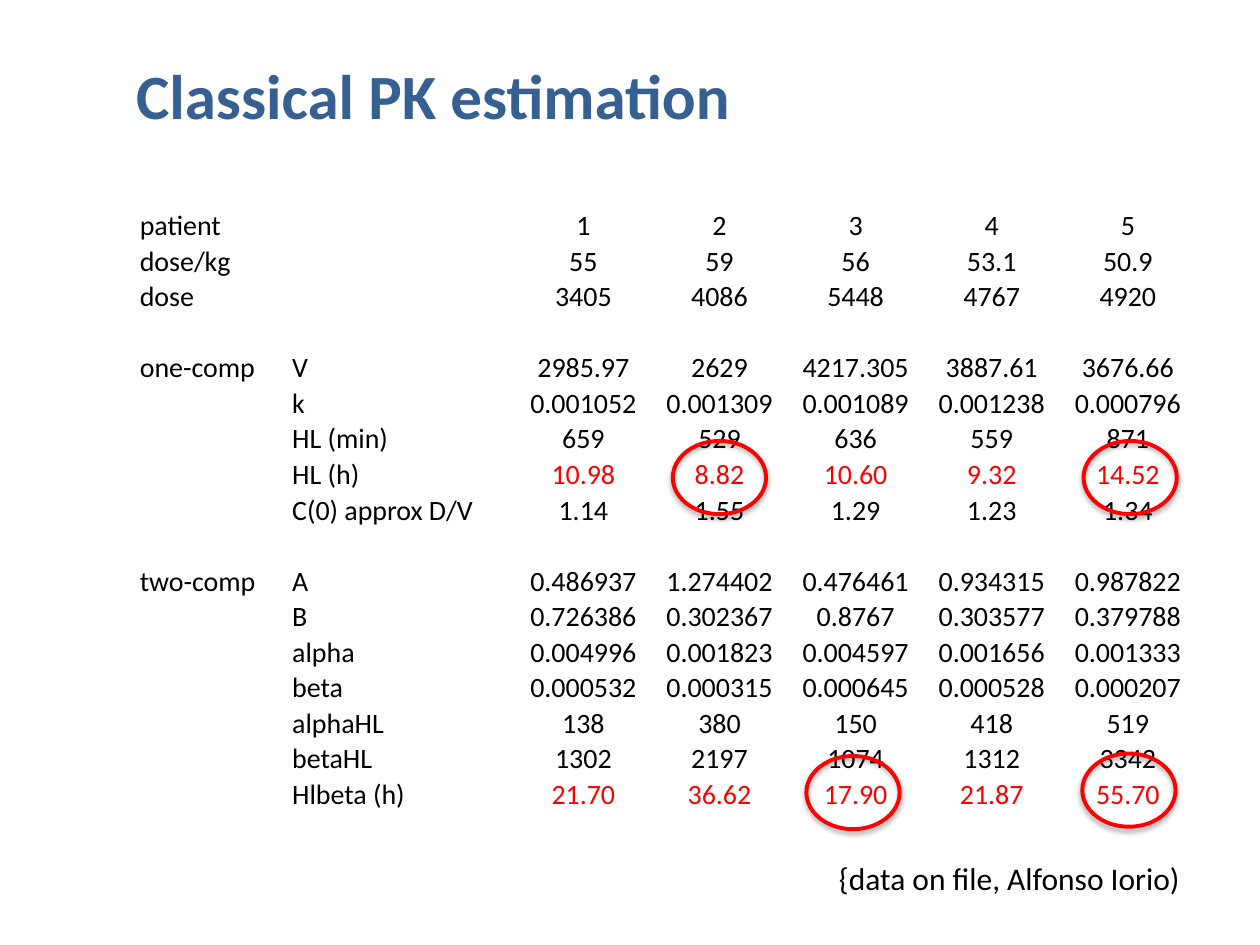
from lxml.etree import SubElement
from pptx import Presentation
from pptx.dml.color import RGBColor
from pptx.enum.shapes import MSO_SHAPE as Shape
from pptx.enum.text import MSO_ANCHOR as Anchor, MSO_AUTO_SIZE as AutoSize, PP_ALIGN as Align
from pptx.oxml.ns import qn
from pptx.util import Pt

BLACK, RED, BLUE = "000000", "FF0000", "376092"
COLUMN_WIDTHS = [68.4, 18.7, 128.2] + [77.8] * 5
ROW_HEIGHT = 20.2
RED_ROWS = ("HL (h)", "Hlbeta (h)")
PK_ROWS = [
    ("patient", "", "1", "2", "3", "4", "5"),
    ("dose/kg", "", "55", "59", "56", "53.1", "50.9"),
    ("dose", "", "3405", "4086", "5448", "4767", "4920"),
    ("",) * 7,
    ("one-comp", "V", "2985.97", "2629", "4217.305", "3887.61", "3676.66"),
    ("", "k", "0.001052", "0.001309", "0.001089", "0.001238", "0.000796"),
    ("", "HL (min)", "659", "529", "636", "559", "871"),
    ("", "HL (h)", "10.98", "8.82", "10.60", "9.32", "14.52"),
    ("", "C(0) approx D/V", "1.14", "1.55", "1.29", "1.23", "1.34"),
    ("",) * 7,
    ("two-comp", "A", "0.486937", "1.274402", "0.476461", "0.934315", "0.987822"),
    ("", "B", "0.726386", "0.302367", "0.8767", "0.303577", "0.379788"),
    ("", "alpha", "0.004996", "0.001823", "0.004597", "0.001656", "0.001333"),
    ("", "beta", "0.000532", "0.000315", "0.000645", "0.000528", "0.000207"),
    ("", "alphaHL", "138", "380", "150", "418", "519"),
    ("", "betaHL", "1302", "2197", "1074", "1312", "3342"),
    ("", "Hlbeta (h)", "21.70", "36.62", "17.90", "21.87", "55.70"),
]
HIGHLIGHTS = [(384.5, 252), (619.2, 252), (460.8, 432), (618.5, 430.6)]


def rgb(hex_color):
    return RGBColor.from_string(hex_color)


def write(frame, text, size=16, color=BLACK, bold=False, align=Align.LEFT):
    paragraph = frame.paragraphs[0]
    paragraph.alignment = align
    if not text:
        SubElement(paragraph._p, qn("a:endParaRPr"), sz=str(size * 100))
        return
    run = paragraph.add_run()
    run.text = text
    run.font.name = "Calibri"
    run.font.size = Pt(size)
    run.font.bold = bold
    run.font.color.rgb = rgb(color)


def place(shape, left, top, width, height):
    shape.left, shape.top = Pt(left), Pt(top)
    shape.width, shape.height = Pt(width), Pt(height)


def add_title(slide, text):
    title = slide.shapes.title
    place(title, 70.6, 28.1, 648, 51.1)
    title.text_frame.auto_size = AutoSize.NONE
    title.text_frame.vertical_anchor = Anchor.BOTTOM
    write(title.text_frame, text, size=36, color=BLUE, bold=True)


def fill_cell(cell, text, **text_format):
    cell.fill.background()
    cell.vertical_anchor = Anchor.BOTTOM
    cell.margin_left = cell.margin_right = cell.margin_top = Pt(0.72)
    cell.margin_bottom = Pt(0)
    write(cell.text_frame, text, **text_format)


def add_pk_table(slide):
    pk_table = slide.shapes.add_table(
        len(PK_ROWS), len(COLUMN_WIDTHS), Pt(79.2), Pt(118.8),
        Pt(sum(COLUMN_WIDTHS)), Pt(ROW_HEIGHT * len(PK_ROWS))).table
    pk_table.first_row = pk_table.horz_banding = False
    for column, width in zip(pk_table.columns, COLUMN_WIDTHS):
        column.width = Pt(width)
    for row, (model, parameter, *values) in zip(pk_table.rows, PK_ROWS):
        row.height = Pt(ROW_HEIGHT)
        value_color = RED if parameter in RED_ROWS else BLACK
        for index, text in enumerate([model, "", parameter, *values]):
            if index < 3:
                fill_cell(row.cells[index], text)
            else:
                fill_cell(row.cells[index], text, color=value_color, align=Align.CENTER)


def add_shadow(shape):
    shape.shadow.inherit = False
    effects = shape._element.spPr.find(qn("a:effectLst"))
    shadow = SubElement(effects, qn("a:outerShdw"), blurRad=str(Pt(3.1)),
                        dist=str(Pt(1.8)), dir="5400000", rotWithShape="0")
    shade = SubElement(shadow, qn("a:srgbClr"), val=BLACK)
    SubElement(shade, qn("a:alpha"), val="35000")


def add_highlight(group, left, top):
    ring = group.shapes.add_shape(Shape.OVAL, Pt(left), Pt(top), Pt(53.3), Pt(41.8))
    ring.fill.background()
    ring.line.color.rgb = rgb(RED)
    ring.line.width = Pt(2.25)
    add_shadow(ring)


def add_data_credit(slide, text):
    credit = slide.shapes.add_textbox(Pt(472.3), Pt(487.4), Pt(212.4), Pt(29))
    credit.text_frame.word_wrap = False
    credit.text_frame.auto_size = AutoSize.SHAPE_TO_FIT_TEXT
    write(credit.text_frame, text, size=18)


def main():
    deck = Presentation()
    deck.slide_width, deck.slide_height = Pt(720), Pt(540)
    slide = deck.slides.add_slide(deck.slide_layouts[5])
    add_pk_table(slide)
    add_title(slide, "Classical PK estimation")
    highlights = slide.shapes.add_group_shape()
    for left, top in HIGHLIGHTS:
        add_highlight(highlights, left, top)
    add_data_credit(slide, "{data on file, Alfonso Iorio)")
    deck.save("out.pptx")


if __name__ == "__main__":
    main()
